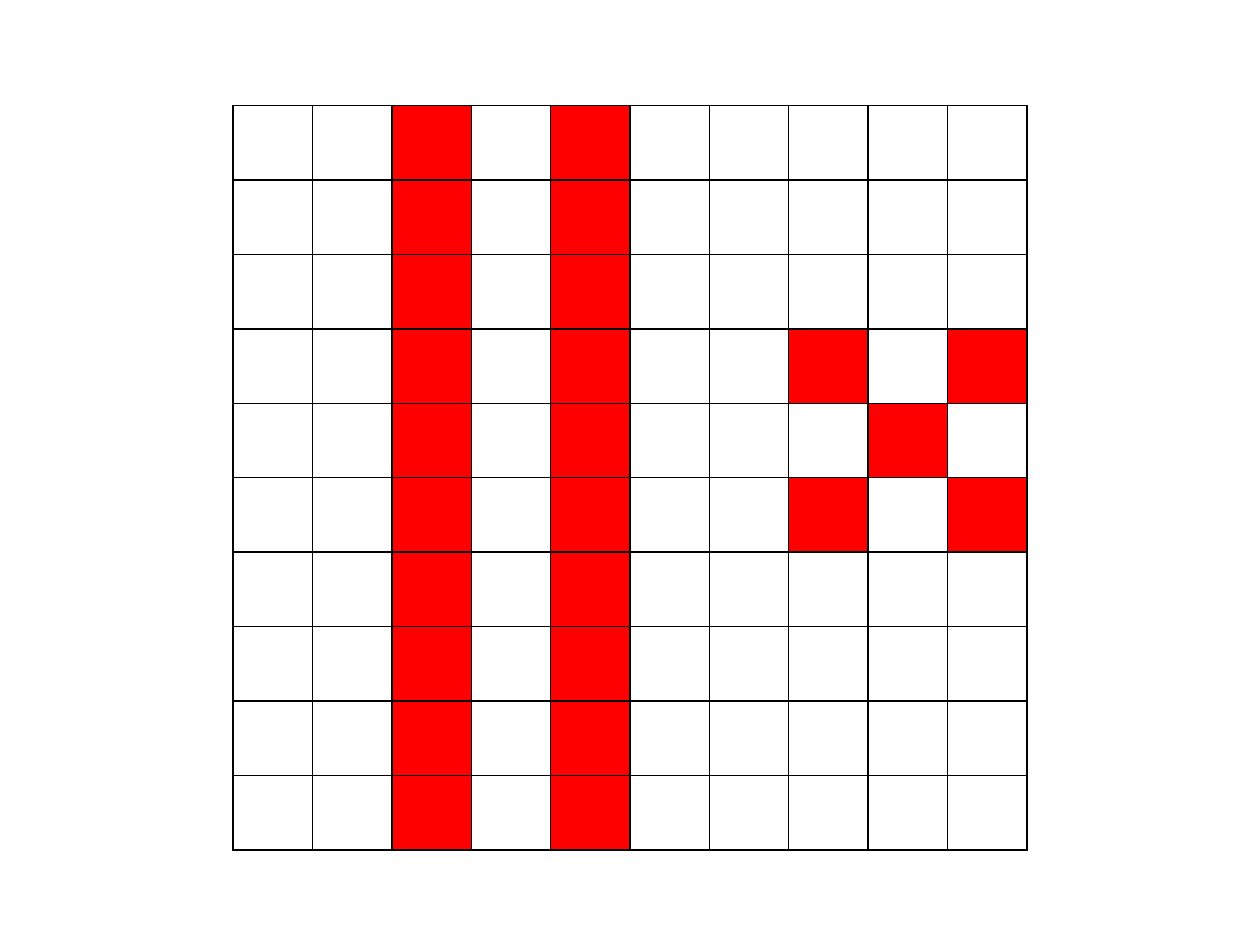
from itertools import product

from lxml.etree import SubElement
from pptx import Presentation
from pptx.dml.color import RGBColor
from pptx.oxml.ns import qn
from pptx.util import Cm, Pt

GRID_SIZE = 10
RED_COLUMNS = {2, 4}
CROSS_CELLS = {(3, 7), (3, 9), (4, 8), (5, 7), (5, 9)}


def color(value):
    return RGBColor.from_string(value)


def add_borders(cell, line_color, width):
    properties = cell._tc.get_or_add_tcPr()
    for side in ("lnL", "lnR", "lnT", "lnB"):
        line = SubElement(properties, qn(f"a:{side}"), w=str(Pt(width)))
        fill = SubElement(line, qn("a:solidFill"))
        SubElement(fill, qn("a:srgbClr"), val=str(color(line_color)))


def fill_cell(cell, row, column):
    if column == 0:
        cell.fill.background()
        return
    is_red = column in RED_COLUMNS or (row, column) in CROSS_CELLS
    cell.fill.solid()
    cell.fill.fore_color.rgb = color("FF0000" if is_red else "FFFFFF")


def add_pixel_grid(slide, left, top, width, height):
    table = slide.shapes.add_table(
        GRID_SIZE, GRID_SIZE, Cm(left), Cm(top), Cm(width), Cm(height)
    ).table
    table.first_row = False
    table.horz_banding = False
    for column in table.columns:
        column.width = Cm(width / GRID_SIZE)
    for row in table.rows:
        row.height = Cm(height / GRID_SIZE)
    for row, column in product(range(GRID_SIZE), repeat=2):
        cell = table.cell(row, column)
        add_borders(cell, "000000", 1)
        fill_cell(cell, row, column)


def main():
    presentation = Presentation()
    presentation.slide_width = Cm(25.4)
    presentation.slide_height = Cm(19.05)
    slide = presentation.slides.add_slide(presentation.slide_layouts[6])
    add_pixel_grid(slide, left=4.7, top=2.13, width=16, height=15)
    presentation.save("out.pptx")


if __name__ == "__main__":
    main()
